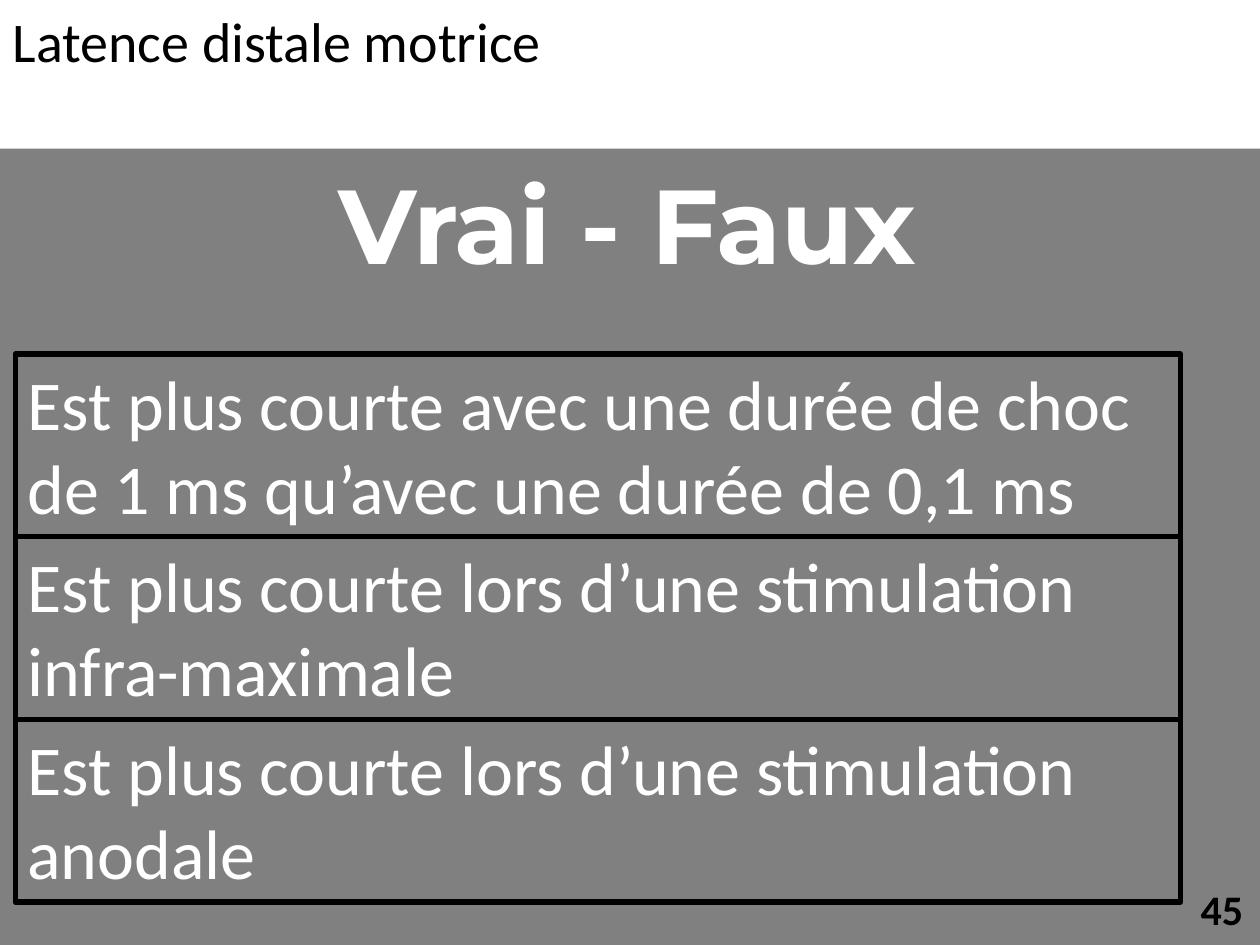
from pptx import Presentation
from pptx.dml.color import RGBColor
from pptx.enum.shapes import MSO_SHAPE
from pptx.enum.text import MSO_ANCHOR, MSO_AUTO_SIZE, PP_ALIGN
from pptx.util import Inches, Pt

RECT = MSO_SHAPE.RECTANGLE
TOP = MSO_ANCHOR.TOP
FIXED = MSO_AUTO_SIZE.NONE
LEFT, MID = PP_ALIGN.LEFT, PP_ALIGN.CENTER

COLOURS = {"back": "808080", "light": "FFFFFF", "dark": "000000"}
CLAIMS = [
    "Est plus courte avec une durée de choc de 1 ms qu’avec une durée de 0,1 ms",
    "Est plus courte lors d’une stimulation infra-maximale",
    "Est plus courte lors d’une stimulation anodale",
]


def colour(name):
    return RGBColor.from_string(COLOURS[name])


class Quiz:
    """Holds the quiz style and the slide being filled."""

    frame = {"vertical_anchor": TOP, "auto_size": FIXED}
    font = {"name": "Calibri", "bold": False}

    def __init__(self, deck):
        self.slide = deck.slides.add_slide(deck.slide_layouts[5])
        fill = self.slide.background.fill
        fill.solid()
        fill.fore_color.rgb = colour("back")

    def set_text(self, shape, text, size, ink, align=LEFT, wrap=True, **font):
        body = shape.text_frame
        for key, value in {**self.frame, "word_wrap": wrap}.items():
            setattr(body, key, value)
        line = body.paragraphs[0]
        line.alignment = align
        run = line.add_run()
        run.text = text
        for key, value in {**self.font, "size": Pt(size), **font}.items():
            setattr(run.font, key, value)
        run.font.color.rgb = colour(ink)

    def title(self, text, box):
        shape = self.slide.shapes.title
        for key, value in zip(("left", "top", "width", "height"), box):
            setattr(shape, key, Inches(value))
        shape.fill.solid()
        shape.fill.fore_color.rgb = colour("light")
        self.set_text(shape, text, 32, "dark")

    def label(self, text, box, size, ink, **style):
        shape = self.slide.shapes.add_textbox(*map(Inches, box))
        self.set_text(shape, text, size, ink, wrap=False, bold=True, **style)

    def claim(self, text, box):
        shape = self.slide.shapes.add_shape(RECT, *map(Inches, box))
        shape.shadow.inherit = False
        shape.fill.background()
        shape.line.color.rgb = colour("dark")
        shape.line.width = Pt(3)
        self.set_text(shape, text, 40, "light")


def main():
    deck = Presentation()
    deck.slide_width, deck.slide_height = Inches(10), Inches(7.5)
    quiz = Quiz(deck)
    quiz.title("Latence distale motrice", (0, 0, 10, 1.18))
    quiz.label("45", (9.43, 6.96, 0.54, 0.5), 24, "dark")
    high = 1.45
    for row, text in enumerate(CLAIMS):
        quiz.claim(text, (0.12, 2.81 + row * high, 9.25, high))
    quiz.label("Vrai - Faux", (2.41, 1.22, 5.14, 1.11), 60, "light",
               align=MID, name="Montserrat")
    deck.save("out.pptx")


if __name__ == "__main__":
    main()
